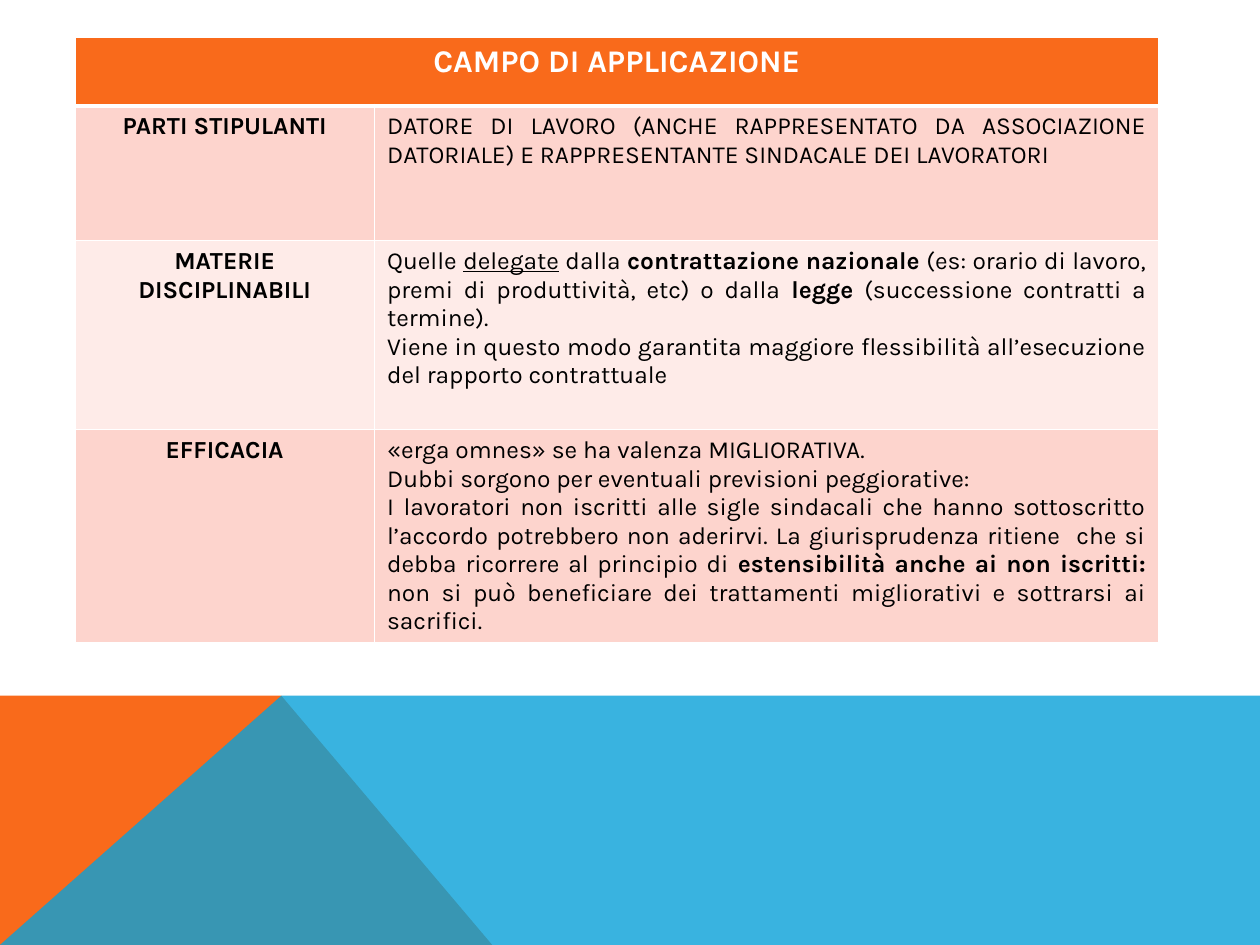
from dataclasses import dataclass

import pptx
import pptx.dml.color
import pptx.enum.text
import pptx.oxml.ns
import pptx.oxml.xmlchemy
import pptx.util
from lxml import etree

Pt = pptx.util.Pt
RGB = pptx.dml.color.RGBColor
Align = pptx.enum.text.PP_ALIGN
qn = pptx.oxml.ns.qn


@dataclass(frozen=True)
class Theme:
    font: str = "Karla"
    title_size: float = 18
    body_size: float = 14
    orange: str = "F96A1B"
    blue: str = "08A1D9"
    bands: tuple[str, str] = ("FDD4CD", "FEEBE8")
    white: str = "FFFFFF"
    black: str = "000000"
    thin: float = 1
    thick: float = 3


@dataclass(frozen=True)
class Span:
    text: str
    bold: bool = False
    underline: bool = False


@dataclass(frozen=True)
class Topic:
    label: str
    height: float
    paragraphs: tuple[tuple[Span, ...], ...]


@dataclass(frozen=True)
class Band:
    points: tuple[tuple[float, float], ...]
    color: str
    opacity: int = 100


THEME = Theme()
WIDTH, HEIGHT = 720, 540
BAND_TOP, PEAK = 397.6, 160.8
TABLE_LEFT, TABLE_TOP = 42.8, 21.2
COLUMN_WIDTHS = (171.2, 448.2)
TITLE = "CAMPO DI APPLICAZIONE"
TITLE_HEIGHT = 39.4

BANDS = (
    Band(((0, HEIGHT), (0, BAND_TOP), (PEAK, BAND_TOP), (281.3, HEIGHT)), THEME.orange),
    Band(((0, HEIGHT), (PEAK, BAND_TOP), (WIDTH, BAND_TOP), (WIDTH, HEIGHT)), THEME.blue, 80),
)

TOPICS = (
    Topic("PARTI STIPULANTI", 77, (
        (Span("DATORE DI LAVORO (ANCHE RAPPRESENTATO DA ASSOCIAZIONE DATORIALE) "
              "E RAPPRESENTANTE SINDACALE DEI LAVORATORI"),),
    )),
    Topic("MATERIE DISCIPLINABILI", 108, (
        (Span("Quelle "), Span("delegate", underline=True), Span(" dalla "),
         Span("contrattazione nazionale", bold=True),
         Span(" (es: orario di lavoro, premi di produttività, etc) o dalla "),
         Span("legge", bold=True), Span(" (successione contratti a termine). ")),
        (Span("Viene in questo modo garantita maggiore flessibilità "
              "all’esecuzione del rapporto contrattuale "),),
    )),
    Topic("EFFICACIA", 84, (
        (Span("«erga omnes» se ha valenza MIGLIORATIVA."),),
        (Span("Dubbi sorgono per eventuali previsioni peggiorative:"),),
        (Span("I lavoratori non iscritti alle sigle sindacali che hanno sottoscritto "
              "l’accordo potrebbero non aderirvi. La giurisprudenza ritiene  che si "
              "debba ricorrere al principio di "),
         Span("estensibilità anche ai non iscritti: ", bold=True),
         Span("non si può beneficiare dei trattamenti migliorativi "
              "e sottrarsi ai sacrifici.")),
    )),
)


def draw_band(slide: pptx.slide.Slide, band: Band) -> None:
    start, *others = [(Pt(x), Pt(y)) for x, y in band.points]
    builder = slide.shapes.build_freeform(*start)
    builder.add_line_segments(others, close=True)
    shape = builder.convert_to_shape()
    shape.shadow.inherit = False
    shape.line.fill.background()
    shape.fill.solid()
    shape.fill.fore_color.rgb = RGB.from_string(band.color)
    if band.opacity < 100:
        color = shape.fill._xPr.find(qn("a:solidFill"))[0]
        etree.SubElement(color, qn("a:alpha"), val=str(band.opacity * 1000))


def set_borders(cell: pptx.table._Cell, top: float, bottom: float) -> None:
    """Put white borders ahead of the fill, in the order the schema asks for."""
    properties = cell._tc.get_or_add_tcPr()
    widths = {"lnL": THEME.thin, "lnR": THEME.thin, "lnT": top, "lnB": bottom}
    for position, (side, width) in enumerate(widths.items()):
        line = etree.Element(qn(f"a:{side}"), w=str(Pt(width)))
        fill = etree.SubElement(line, qn("a:solidFill"))
        etree.SubElement(fill, qn("a:srgbClr"), val=THEME.white)
        properties.insert(position, line)


def style_cell(cell: pptx.table._Cell, fill: str, top: float, bottom: float) -> None:
    cell.fill.solid()
    cell.fill.fore_color.rgb = RGB.from_string(fill)
    set_borders(cell, top, bottom)


def write_cell(cell: pptx.table._Cell, paragraphs: tuple[tuple[Span, ...], ...],
               alignment: Align, size: float = THEME.body_size,
               color: str = THEME.black) -> None:
    frame = cell.text_frame
    for index, spans in enumerate(paragraphs):
        paragraph = frame.add_paragraph() if index else frame.paragraphs[0]
        paragraph.alignment = alignment
        paragraph.font.name = THEME.font
        paragraph.font.size = Pt(size)
        paragraph.font.color.rgb = RGB.from_string(color)
        for span in spans:
            run = paragraph.add_run()
            run.text = span.text
            run.font.bold = span.bold
            if span.underline:
                run.font.underline = True


def draw_table(slide: pptx.slide.Slide) -> None:
    heights = (TITLE_HEIGHT, *(topic.height for topic in TOPICS))
    table = slide.shapes.add_table(
        len(heights), len(COLUMN_WIDTHS), Pt(TABLE_LEFT), Pt(TABLE_TOP),
        Pt(sum(COLUMN_WIDTHS)), Pt(sum(heights))).table
    for column, width in zip(table.columns, COLUMN_WIDTHS):
        column.width = Pt(width)
    for row, height in zip(table.rows, heights):
        row.height = Pt(height)

    title = table.cell(0, 0)
    title.merge(table.cell(0, 1))
    for cell in table.rows[0].cells:
        style_cell(cell, THEME.orange, THEME.thin, THEME.thick)
    write_cell(title, ((Span(TITLE, bold=True),),), Align.CENTER,
               THEME.title_size, THEME.white)

    for index, topic in enumerate(TOPICS):
        label, content = table.rows[index + 1].cells
        for cell in (label, content):
            style_cell(cell, THEME.bands[index % 2],
                       THEME.thin if index else THEME.thick, THEME.thin)
        write_cell(label, ((Span(topic.label, bold=True),),), Align.CENTER)
        write_cell(content, topic.paragraphs, Align.JUSTIFY)


def main() -> None:
    presentation = pptx.Presentation()
    presentation.slide_width, presentation.slide_height = Pt(WIDTH), Pt(HEIGHT)
    slide = presentation.slides.add_slide(presentation.slide_layouts[6])
    for band in BANDS:
        draw_band(slide, band)
    draw_table(slide)
    presentation.save("out.pptx")


if __name__ == "__main__":
    main()
